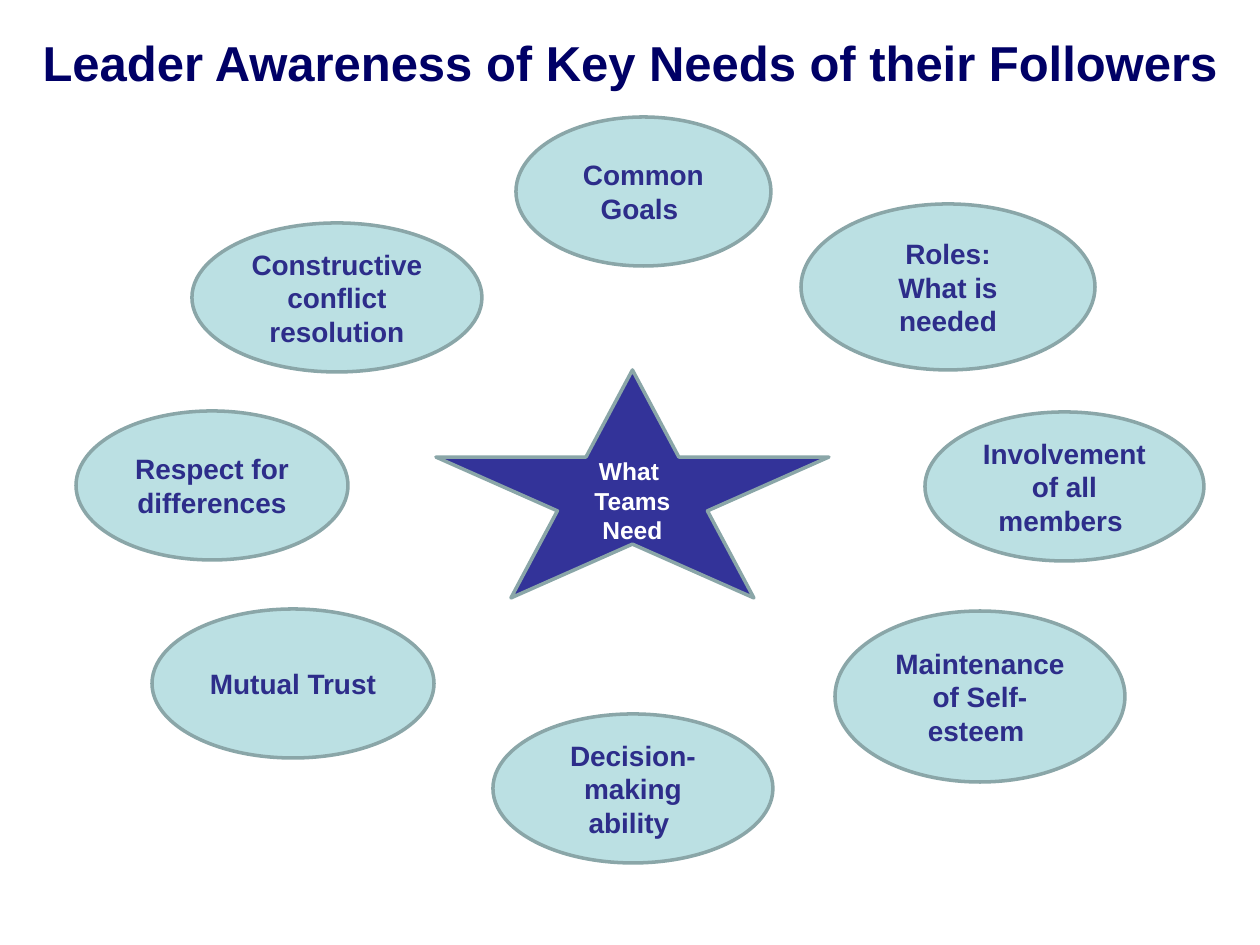
"""Build a slide with a star of team needs ringed by eight ellipses."""
from pptx import Presentation
from pptx.dml.color import RGBColor
from pptx.enum.shapes import MSO_SHAPE as Shape
from pptx.enum.text import MSO_ANCHOR as Anchor, PP_ALIGN as Align
from pptx.util import Emu, Pt

TITLE = "Leader Awareness of Key Needs of their Followers"
TITLE_BOX = (30, 6, 1230, 111)
NEEDS = [
    ("Maintenance of Self-esteem ", (835, 611, 290, 171)),
    ("Constructive conflict resolution", (192, 223, 290, 149)),
    ("Respect for differences", (76, 411, 272, 149)),
    ("Mutual Trust", (152, 609, 282, 149)),
    ("Decision-making ability ", (493, 714, 280, 149)),
    ("Involvement of all members ", (925, 412, 279, 149)),
    ("Roles:\nWhat is needed", (801, 204, 294, 166)),
    ("Common Goals ", (516, 117, 255, 149)),
]
CENTRE = "What  Teams Need"
CENTRE_BOX = (436, 370, 393, 228)

NAVY = RGBColor(0x00, 0x00, 0x66)
INDIGO = RGBColor(0x2D, 0x2D, 0x8A)
STAR_BLUE = RGBColor(0x33, 0x33, 0x99)
PALE_TEAL = RGBColor(0xBB, 0xE0, 0xE3)
GREY_TEAL = RGBColor(0x8A, 0xA6, 0xA8)
WHITE = RGBColor(0xFF, 0xFF, 0xFF)
FONT = "Arial"
PX_PER_INCH = 126


def px(length):
    """Turn px into EMU."""
    return Emu(round(length * 914400 / PX_PER_INCH))


def write(shape, text, size, color, align):
    """Fill a shape with bold text, centred vertically."""
    frame = shape.text_frame
    frame.text = text
    frame.word_wrap = True
    frame.vertical_anchor = Anchor.MIDDLE
    for para in frame.paragraphs:
        para.alignment = align
        for span in para.runs:
            span.font.name = FONT
            span.font.size = Pt(size)
            span.font.bold = True
            span.font.color.rgb = color


def add_figure(slide, kind, box, fill, text, size, color):
    """Add an outlined shape with centred text."""
    shape = slide.shapes.add_shape(kind, *map(px, box))
    shape.shadow.inherit = False
    shape.fill.solid()
    shape.fill.fore_color.rgb = fill
    shape.line.color.rgb = GREY_TEAL
    shape.line.width = Pt(2)
    write(shape, text, size, color, Align.CENTER)


def main():
    """Build and save the deck."""
    deck = Presentation()
    deck.slide_width, deck.slide_height = px(1260), px(945)
    slide = deck.slides.add_slide(deck.slide_layouts[5])
    title = slide.shapes.title
    title.left, title.top, title.width, title.height = map(px, TITLE_BOX)
    write(title, TITLE, 28, NAVY, Align.LEFT)
    for text, box in NEEDS:
        add_figure(slide, Shape.OVAL, box, PALE_TEAL, text, 16, INDIGO)
    add_figure(slide, Shape.STAR_5_POINT, CENTRE_BOX, STAR_BLUE, CENTRE, 14, WHITE)
    deck.save("out.pptx")


if __name__ == "__main__":
    main()
